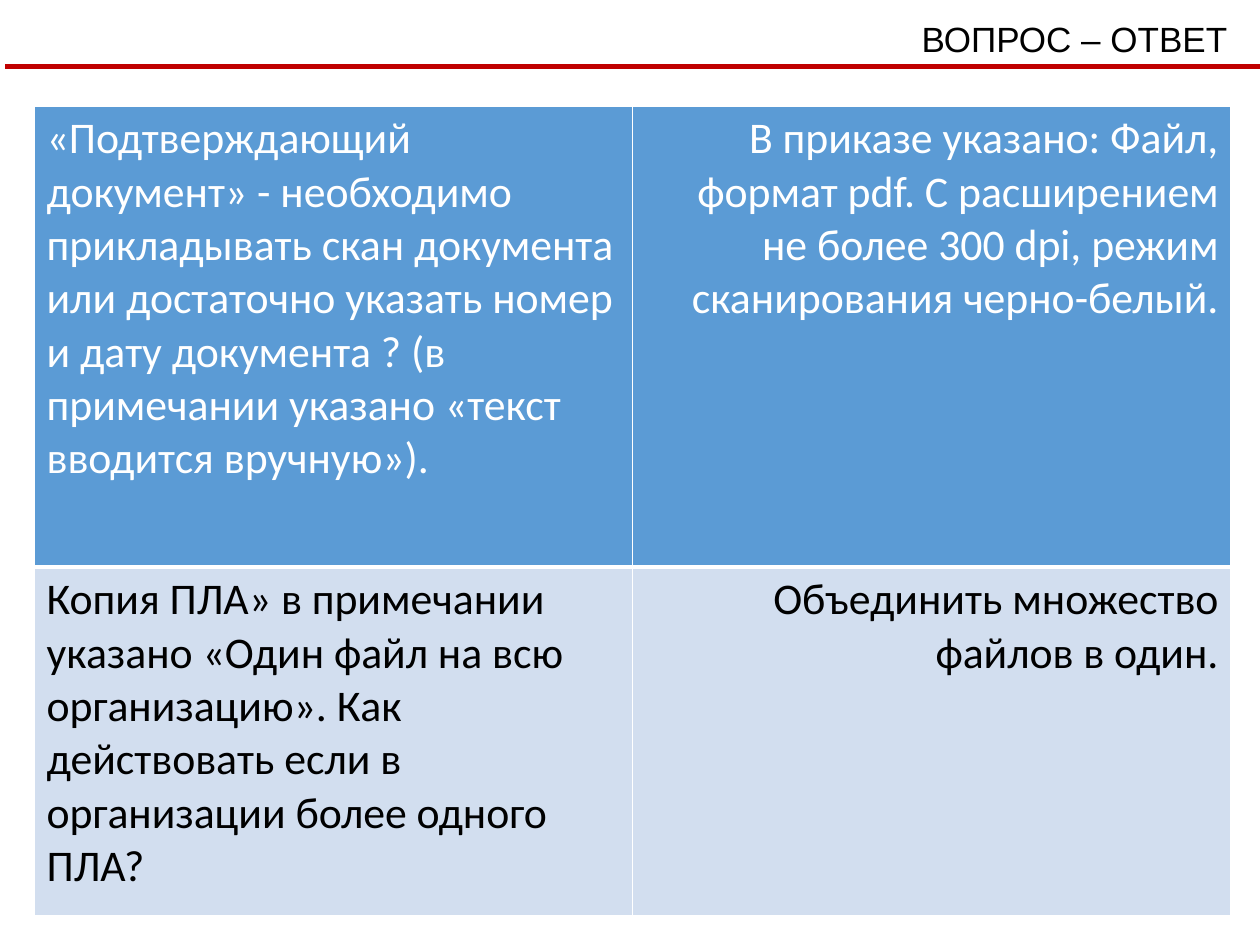
from lxml import etree
from pptx import Presentation
from pptx.dml.color import RGBColor
from pptx.enum import shapes, text
from pptx.oxml.ns import qn
from pptx.util import Inches, Pt

WHITE, BLACK, RED = "FFFFFF", "000000", "C00000"
ROWS = [
    (
        "«Подтверждающий документ» - необходимо прикладывать скан документа "
        "или достаточно указать номер и дату документа ? "
        "(в примечании указано «текст вводится вручную»).",
        "В приказе указано: Файл, формат pdf. С расширением не более 300 dpi, "
        "режим сканирования черно-белый.",
    ),
    (
        "Копия ПЛА» в примечании указано «Один файл на всю организацию». "
        "Как действовать если в организации более одного ПЛА?",
        "Объединить множество файлов в один.",
    ),
]
ROW_HEIGHTS = [3.66, 2.77]
ROW_STYLES = [
    ("5B9BD5", WHITE, {"lnL": 1, "lnR": 1, "lnT": 1, "lnB": 3}),
    ("D2DEEF", BLACK, {"lnL": 1, "lnR": 1, "lnT": 3, "lnB": 1}),
]


def rgb(value):
    return RGBColor.from_string(value)


def write(frame, wording, size, font, color, align):
    paragraph = frame.paragraphs[0]
    paragraph.alignment = align
    run = paragraph.add_run()
    run.text = wording
    run.font.size = Pt(size)
    run.font.name = font
    run.font.bold = False
    run.font.color.rgb = rgb(color)


def add_heading(slide, wording):
    heading = slide.shapes.add_textbox(
        Inches(0.23), Inches(0.09), Inches(9.61), Inches(0.44))
    heading.text_frame.word_wrap = True
    write(heading.text_frame, wording, 20, "Arial", BLACK, text.PP_ALIGN.RIGHT)


def add_rule(slide):
    rule = slide.shapes.add_connector(
        shapes.MSO_CONNECTOR.STRAIGHT,
        Inches(0.04), Inches(0.53), Inches(10.04), Inches(0.53))
    rule.line.color.rgb = rgb(RED)
    rule.line.width = Pt(3)
    etree.SubElement(rule._element.spPr, qn("a:effectLst"))


def add_borders(cell, widths):
    properties = cell._tc.get_or_add_tcPr()
    for side, width in widths.items():
        border = etree.SubElement(properties, qn(f"a:{side}"), w=str(Pt(width)))
        fill = etree.SubElement(border, qn("a:solidFill"))
        etree.SubElement(fill, qn("a:srgbClr"), val=WHITE)


def add_answers(slide):
    table = slide.shapes.add_table(
        len(ROWS), 2, Inches(0.27), Inches(0.84),
        Inches(9.5), Inches(sum(ROW_HEIGHTS))).table
    aligns = [text.PP_ALIGN.LEFT, text.PP_ALIGN.RIGHT]
    for row, height, pair, style in zip(table.rows, ROW_HEIGHTS, ROWS, ROW_STYLES):
        row.height = Inches(height)
        background, color, borders = style
        for cell, wording, align in zip(row.cells, pair, aligns):
            add_borders(cell, borders)
            cell.fill.solid()
            cell.fill.fore_color.rgb = rgb(background)
            write(cell.text_frame, wording, 25, "Calibri", color, align)


def main():
    deck = Presentation()
    deck.slide_width, deck.slide_height = Inches(10), Inches(7.5)
    slide = deck.slides.add_slide(deck.slide_layouts[6])
    add_rule(slide)
    add_heading(slide, "ВОПРОС – ОТВЕТ")
    add_answers(slide)
    deck.save("out.pptx")


if __name__ == "__main__":
    main()
